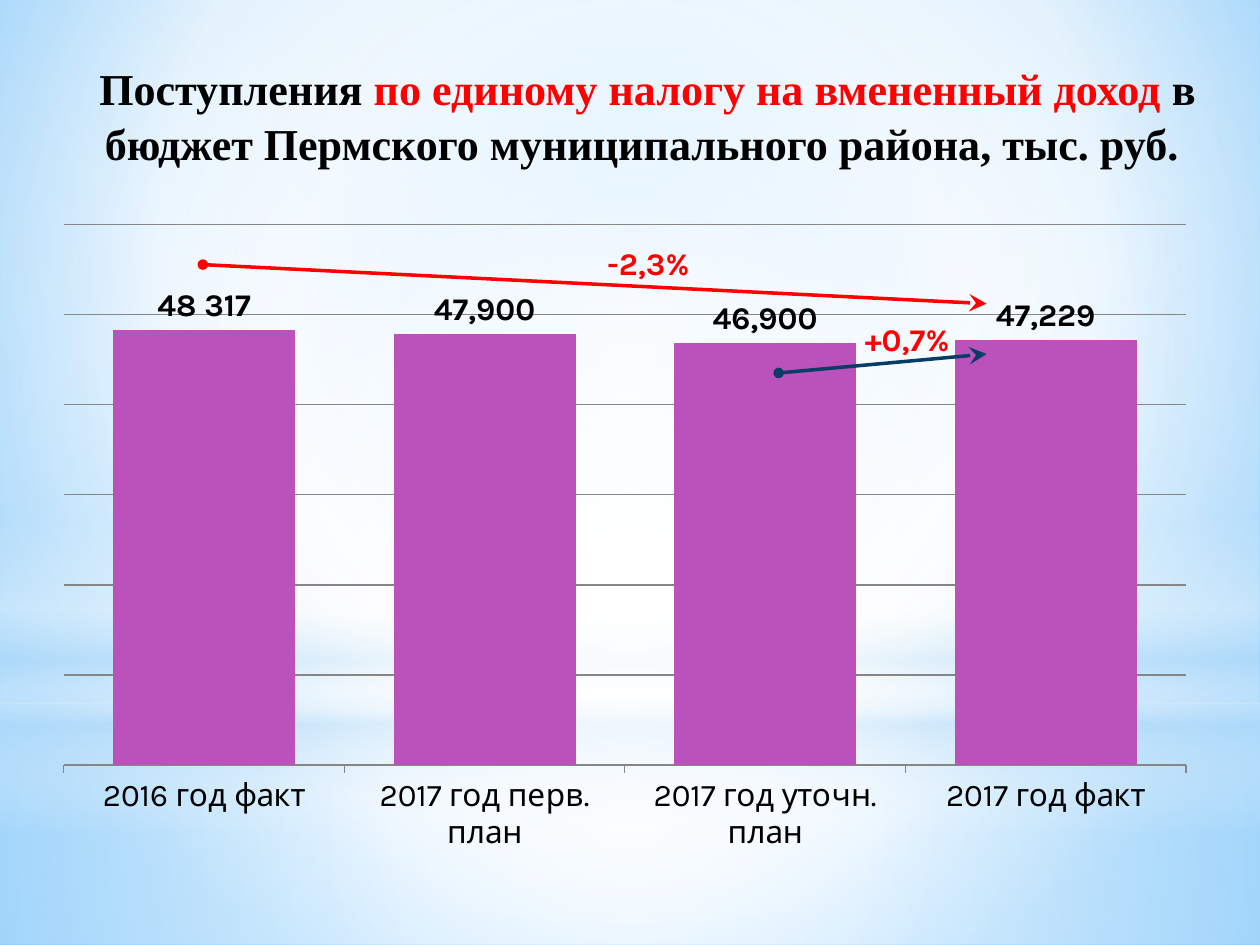
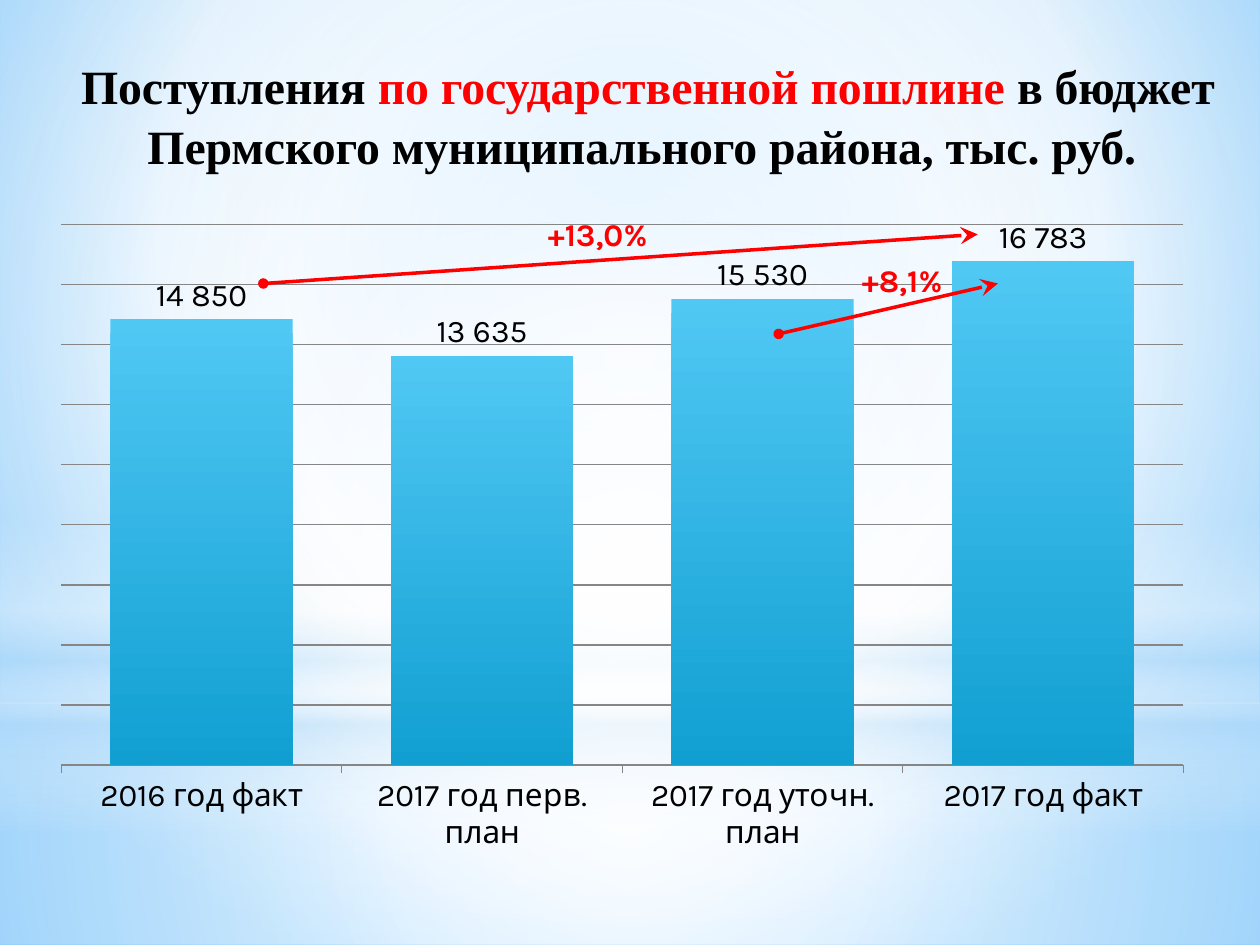
"""Build two slides of tax revenue charts for the Perm municipal district."""
from lxml.etree import SubElement
from pptx import Presentation
from pptx.chart.data import CategoryChartData
from pptx.dml.color import RGBColor
from pptx.enum.chart import XL_CHART_TYPE as ChartType
from pptx.enum.chart import XL_LABEL_POSITION as LabelPosition
from pptx.enum.chart import XL_TICK_LABEL_POSITION as TickLabels
from pptx.enum.chart import XL_TICK_MARK as TickMark
from pptx.enum.shapes import MSO_CONNECTOR as Connector
from pptx.enum.shapes import MSO_SHAPE as Shape
from pptx.enum.text import MSO_ANCHOR as Anchor
from pptx.enum.text import MSO_AUTO_SIZE as AutoSize
from pptx.enum.text import PP_ALIGN as Align
from pptx.oxml.ns import qn
from pptx.util import Pt

PX = 9144

BLACK = RGBColor(0, 0, 0)
WHITE = RGBColor(255, 255, 255)
RED = RGBColor(255, 0, 0)
NAVY = RGBColor(0x07, 0x3C, 0x65)
PURPLE = RGBColor(0xBB, 0x51, 0xBB)
SKY = RGBColor(0x50, 0xC8, 0xF4)
OCEAN = RGBColor(0x11, 0x9F, 0xD2)
GREY = RGBColor(0x86, 0x86, 0x86)
MIST = RGBColor(0xB4, 0xDC, 0xFA)
PALE_BLUE = RGBColor(0x9E, 0xD5, 0xFF)
BLUE = RGBColor(0x5B, 0xB9, 0xFF)

CENTRE = (50, 50, 50, 50)
BACKDROP = [(0, PALE_BLUE, 100), (60, WHITE, 100), (100, BLUE, 100)]
BANDS = [
    (Shape.RECTANGLE, (0, 558, 1000, 192), CENTRE,
     [(0, WHITE, 91), (37, WHITE, 76), (100, MIST, 79)]),
    (Shape.RECTANGLE, (0, 0, 1000, 558), CENTRE,
     [(0, WHITE, 89), (48, WHITE, 62), (100, MIST, 79)]),
    (Shape.RECTANGLE, (0, 412, 1000, 250), None,
     [(0, WHITE, 0), (29, WHITE, 30), (45, MIST, 40),
      (55, WHITE, 26), (65, MIST, 60), (100, WHITE, 0)]),
    (Shape.OVAL, (0, 175, 1000, 558), CENTRE,
     [(0, WHITE, 100), (56, WHITE, 0)]),
]
PERIODS = ["2016 год факт", "2017 год перв. план",
           "2017 год уточн. план", "2017 год факт"]
DISTRICT = "в бюджет Пермского муниципального района, тыс. руб."


def scaled(*lengths):
    return [length * PX for length in lengths]


def set_gradient(parent, stops, focus):
    """Swap the solid fill of parent for a gradient; no focus means top to bottom."""
    gradient = parent.makeelement(qn("a:gradFill"), {"rotWithShape": "1"})
    stop_list = SubElement(gradient, qn("a:gsLst"))
    for position, colour, opacity in stops:
        stop = SubElement(stop_list, qn("a:gs"), pos=str(position * 1000))
        tone = SubElement(stop, qn("a:srgbClr"), val=str(colour))
        if opacity < 100:
            SubElement(tone, qn("a:alpha"), val=str(opacity * 1000))
    if focus:
        circle = SubElement(gradient, qn("a:path"), {"path": "circle"})
        sides = {side: str(share * 1000) for side, share in zip("ltrb", focus)}
        SubElement(circle, qn("a:fillToRect"), sides)
    else:
        SubElement(gradient, qn("a:lin"), ang="5400000", scaled="0")
    parent.replace(parent.find(qn("a:solidFill")), gradient)


class RevenueDeck:
    """Holds the style and the current slide."""

    title_font = "Times New Roman"
    body_font = "Karla"
    body_size = Pt(18)

    def __init__(self):
        self.deck = Presentation()
        self.deck.slide_width, self.deck.slide_height = scaled(1000, 750)
        self.page = None

    def new_page(self):
        self.page = self.deck.slides.add_slide(self.deck.slide_layouts[6])
        self.page.background.fill.solid()
        backdrop = self.page.element.find(".//" + qn("p:bgPr"))
        set_gradient(backdrop, BACKDROP, (20, 10, 20, 60))
        for kind, place, focus, stops in BANDS:
            band = self.page.shapes.add_shape(kind, *scaled(*place))
            band.shadow.inherit = False
            band.line.fill.background()
            band.fill.solid()
            set_gradient(band.element.spPr, stops, focus)

    def style(self, font, name, size, colour, bold):
        font.name, font.size, font.bold = name, size, bold
        font.color.rgb = colour

    def title(self, tax, size):
        box = self.page.shapes.add_textbox(*scaled(35, 29, 949, 123))
        frame = box.text_frame
        frame.word_wrap = True
        frame.vertical_anchor = Anchor.MIDDLE
        para = frame.paragraphs[0]
        para.alignment = Align.CENTER
        para.line_spacing = 1.05
        for text, colour in ((" Поступления ", BLACK), (tax + " ", RED), (DISTRICT, BLACK)):
            span = para.add_run()
            span.text = text
            self.style(span.font, self.title_font, Pt(size), colour, True)

    def change(self, text, left, top, width, align=Align.LEFT):
        box = self.page.shapes.add_textbox(*scaled(left, top, width, 40))
        frame = box.text_frame
        frame.word_wrap = True
        frame.auto_size = AutoSize.SHAPE_TO_FIT_TEXT
        frame.text = text
        para = frame.paragraphs[0]
        para.alignment = align
        self.style(para.runs[0].font, self.body_font, self.body_size, RED, True)

    def arrow(self, start, end, colour=RED):
        arrow = self.page.shapes.add_connector(Connector.STRAIGHT, *scaled(*start, *end))
        arrow.line.color.rgb = colour
        arrow.line.width = Pt(2)
        outline = arrow.element.spPr.find(qn("a:ln"))
        SubElement(outline, qn("a:headEnd"), type="oval")
        SubElement(outline, qn("a:tailEnd"), type="stealth", w="lg", len="lg")
        SubElement(arrow.element.spPr, qn("a:effectLst"))

    def columns(self, left, values, top_value, step, number_format, colours, bold, own_labels):
        data = CategoryChartData()
        data.categories = PERIODS
        data.add_series("Series 1", values)
        frame = self.page.shapes.add_chart(
            ChartType.COLUMN_CLUSTERED, *scaled(left, 153, 921, 537), data)
        chart = frame.chart
        chart.has_title = chart.has_legend = False
        self.style(chart.font, self.body_font, self.body_size, BLACK, False)
        self.place_plot(chart)
        self.axes(chart, top_value, step, number_format)
        plot = chart.plots[0]
        plot.gap_width = 54
        plot.vary_by_categories = False
        series = plot.series[0]
        series.invert_if_negative = False
        self.fill_columns(series.format.fill, colours)
        labels = series.data_labels
        labels.show_value = True
        labels.number_format = number_format
        labels.number_format_is_linked = False
        labels.position = LabelPosition.OUTSIDE_END
        self.style(labels.font, self.body_font, self.body_size, BLACK, bold)
        for index, text in enumerate(own_labels):
            label = series.points[index].data_label
            label.text_frame.text = text
            span = label.text_frame.paragraphs[0].runs[0]
            self.style(span.font, self.body_font, self.body_size, BLACK, bold)
            label.position = LabelPosition.OUTSIDE_END

    def fill_columns(self, fill, colours):
        if len(colours) == 1:
            fill.solid()
            fill.fore_color.rgb = colours[0]
            return
        fill.gradient()
        fill.gradient_angle = 270
        for stop, colour in zip(fill.gradient_stops, colours):
            stop.color.rgb = colour

    def axes(self, chart, top_value, step, number_format):
        periods, amounts = chart.category_axis, chart.value_axis
        periods.major_tick_mark = TickMark.OUTSIDE
        periods.tick_label_position = TickLabels.LOW
        periods.format.line.color.rgb = GREY
        amounts.visible = False
        amounts.minimum_scale, amounts.maximum_scale = 0, top_value
        amounts.major_unit = step
        amounts.tick_labels.number_format = number_format
        amounts.tick_labels.number_format_is_linked = False
        amounts.has_major_gridlines = True
        amounts.major_gridlines.format.line.color.rgb = GREY

    def place_plot(self, chart):
        area = chart.element.find(".//" + qn("c:plotArea"))
        for old in area.findall(qn("c:layout")):
            area.remove(old)
        layout = area.makeelement(qn("c:layout"), {})
        area.insert(0, layout)
        manual = SubElement(layout, qn("c:manualLayout"))
        settings = [("layoutTarget", "inner"), ("xMode", "edge"), ("yMode", "edge"),
                    ("x", "0.017"), ("y", "0.047"), ("w", "0.967"), ("h", "0.799")]
        for name, value in settings:
            SubElement(manual, qn("c:" + name), val=value)


def main():
    slides = RevenueDeck()

    slides.new_page()
    slides.title("по единому налогу на вмененный доход", 25.2)
    slides.columns(35, (48317, 47900, 46900, 47229), 60000, 10000, "#,##0",
                   [PURPLE], True, ["48 317"])
    slides.arrow((161, 210), (783, 241))
    slides.change("-2,3%", 472, 189, 118)
    slides.arrow((618, 296), (783, 281), NAVY)
    slides.change("+0,7%", 657, 249, 126, Align.CENTER)

    slides.new_page()
    slides.title("по государственной пошлине", 27.3)
    slides.columns(33, (14850, 13635, 15530, 16783), 18000, 2000, "0",
                   [SKY, OCEAN], False, ["14 850", "13 635", "15 530", "16 783"])
    slides.arrow((209, 225), (776, 186))
    slides.change("+13,0%", 425, 166, 118)
    slides.arrow((618, 265), (792, 225))
    slides.change("+8,1%", 657, 202, 118, Align.CENTER)

    slides.deck.save("out.pptx")


if __name__ == "__main__":
    main()
